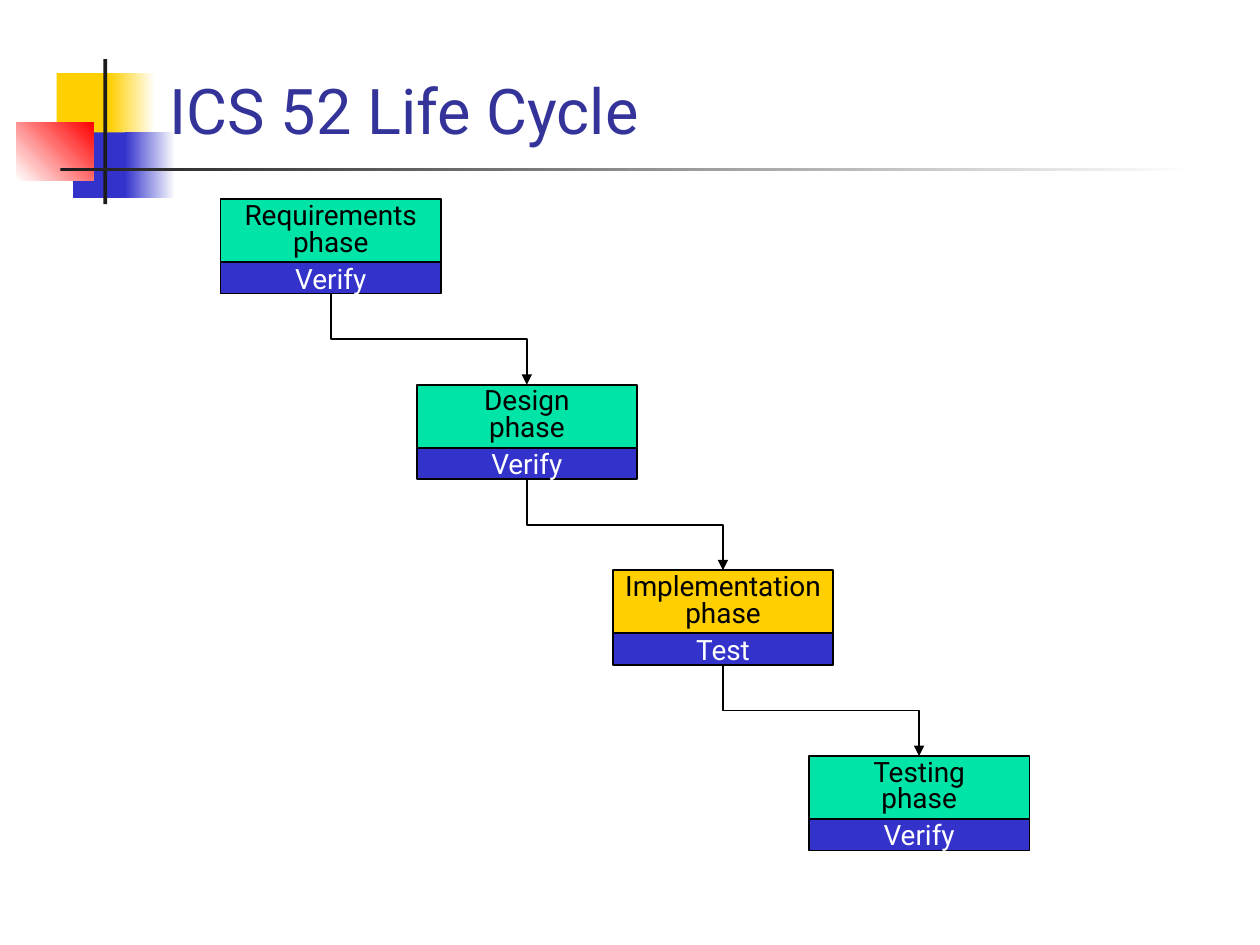
from lxml import etree
from pptx import Presentation
from pptx.dml.color import RGBColor
from pptx.enum.shapes import MSO_CONNECTOR, MSO_SHAPE
from pptx.enum.text import MSO_ANCHOR, PP_ALIGN
from pptx.oxml.ns import qn
from pptx.util import Inches, Pt

RECT = MSO_SHAPE.RECTANGLE
ELBOW = MSO_CONNECTOR.ELBOW
MIDDLE, BOTTOM = MSO_ANCHOR.MIDDLE, MSO_ANCHOR.BOTTOM
LEFT, CENTER = PP_ALIGN.LEFT, PP_ALIGN.CENTER

FONT = "Roboto"
GREEN, GOLD, BLUE = "00E4A8", "FFCF01", "3333CC"
BLACK, WHITE, DARK = "000000", "FFFFFF", "1C1C1C"
TITLE = "ICS 52 Life Cycle"
PHASES = [
    ("Requirements", "Verify", GREEN),
    ("Design", "Verify", GREEN),
    ("Implementation", "Test", GOLD),
    ("Testing", "Verify", GREEN),
]
DECOR = [
    ((0.45, 0.58, 0.48, 0.52), (GOLD,), 0),
    ((0.87, 0.58, 0.36, 0.52), (GOLD, WHITE), 0),
    ((0.58, 1.05, 0.46, 0.52), (BLUE,), 0),
    ((0.99, 1.05, 0.4, 0.52), (BLUE, WHITE), 0),
    ((0.13, 0.97, 0.61, 0.46), (WHITE, "FF0000"), 45),
    ((0.82, 0.47, 0.03, 1.15), (DARK,), 0),
    ((0.48, 1.33, 9, 0.03), (DARK, WHITE), 0),
]
X, Y = 1.75, 1.58
WIDE, TALL, LOW = 1.75, 0.5, 0.25
END_X, END_Y = 6.42, 6
STEP_X = (END_X - X) / (len(PHASES) - 1)
STEP_Y = (END_Y - Y) / (len(PHASES) - 1)


def rgb(code):
    return RGBColor.from_string(code)


def add_rect(box, colors, angle=0):
    shape = slide.shapes.add_shape(RECT, *map(Inches, box))
    shape.shadow.inherit = False
    shape.line.fill.background()
    if len(colors) == 1:
        shape.fill.solid()
        shape.fill.fore_color.rgb = rgb(colors[0])
    else:
        shape.fill.gradient()
        shape.fill.gradient_angle = angle
        for stop, color in zip(shape.fill.gradient_stops, colors):
            stop.color.rgb = rgb(color)
    return shape


def write(shape, lines, size, color, align, anchor, wrap, space=None):
    frame = shape.text_frame
    frame.word_wrap = wrap
    frame.vertical_anchor = anchor
    frame.text = "\n".join(lines)
    for para in frame.paragraphs:
        para.alignment = align
        para.line_spacing = space
        for key, value in {"name": FONT, "size": Pt(size)}.items():
            setattr(para.runs[0].font, key, value)
        para.runs[0].font.color.rgb = rgb(color)


def add_cell(box, fill, lines, color, space=None):
    shape = add_rect(box, (fill,))
    shape.line.color.rgb = rgb(BLACK)
    shape.line.width = Pt(1)
    write(shape, lines, 16, color, CENTER, MIDDLE, False, space)
    return shape


def link(start, end):
    line = slide.shapes.add_connector(ELBOW, 0, 0, 0, 0)
    line.begin_connect(start, 2)
    line.end_connect(end, 0)
    x1, y1 = start.left + start.width // 2, start.top + start.height
    x2, y2 = end.left + end.width // 2, end.top
    wide, tall = y2 - y1, x2 - x1
    place = {
        "left": (x1 + x2 - wide) // 2,
        "top": (y1 + y2 - tall) // 2,
        "width": wide,
        "height": tall,
        "rotation": 270,
    }
    for key, value in place.items():
        setattr(line, key, value)
    props = line._element.spPr
    frame = props.find(qn("a:xfrm"))
    frame.set("flipH", "1")
    frame.attrib.pop("flipV", None)
    line.line.color.rgb = rgb(BLACK)
    line.line.width = Pt(1)
    etree.SubElement(props.find(qn("a:ln")), qn("a:tailEnd"), type="triangle")
    etree.SubElement(props, qn("a:effectLst"))


deck = Presentation()
deck.slide_width, deck.slide_height = Inches(10), Inches(7.5)
slide = deck.slides.add_slide(deck.slide_layouts[6])

for box, colors, angle in DECOR:
    add_rect(box, colors, angle)

title = slide.shapes.add_textbox(*map(Inches, (1.25, 0.39, 8.52, 0.83)))
write(title, [TITLE], 36, "333399", LEFT, BOTTOM, True)

cells = []
for i, (name, check, fill) in enumerate(PHASES):
    x, y = X + i * STEP_X, Y + i * STEP_Y
    top = add_cell((x, y, WIDE, TALL), fill, [name, "phase"], BLACK, 0.8)
    base = add_cell((x, y + TALL, WIDE, LOW), BLUE, [check], WHITE)
    cells.append((top, base))

for (_, base), (top, _) in zip(cells, cells[1:]):
    link(base, top)

deck.save("out.pptx")
